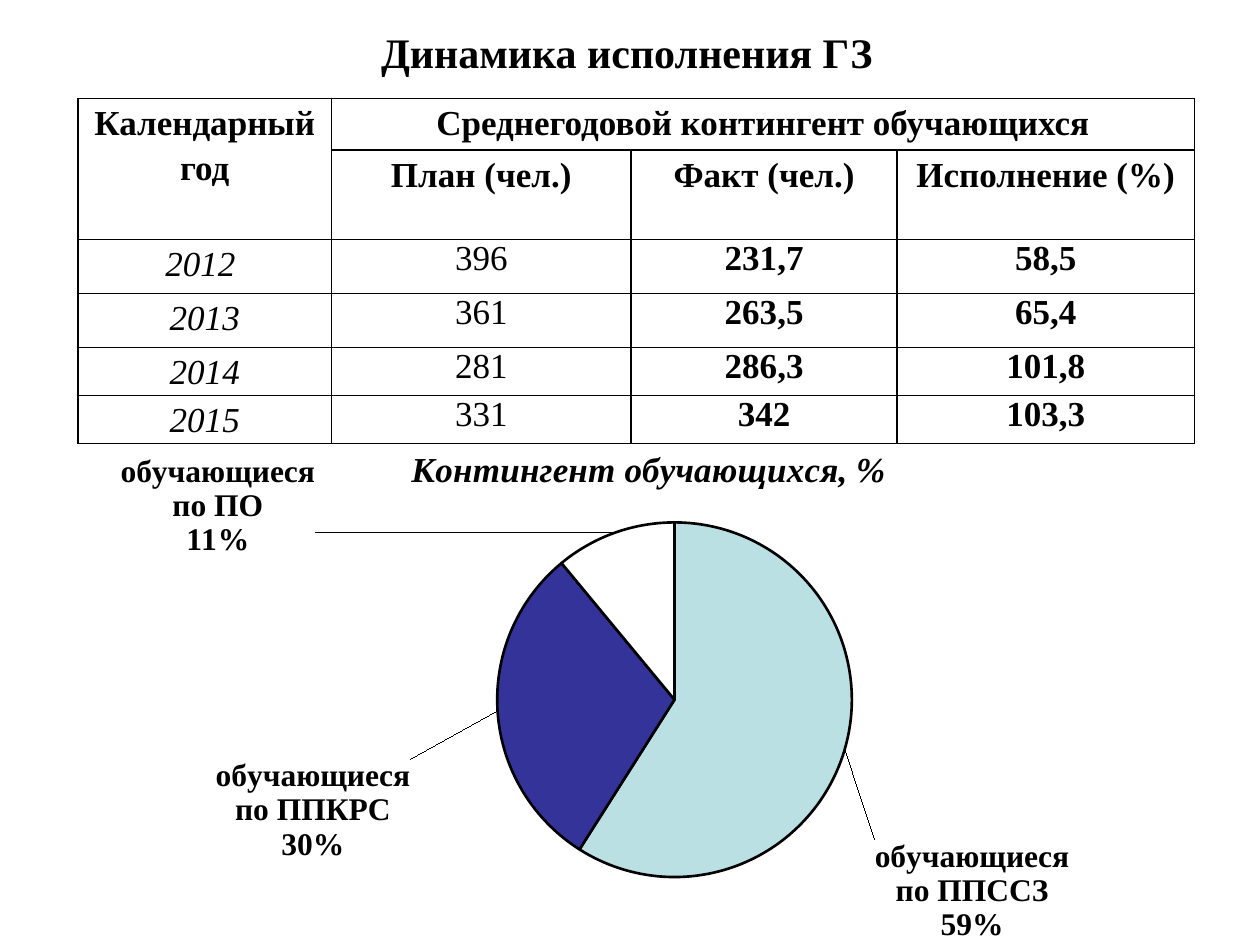
from lxml import etree
from pptx import Presentation
from pptx.chart.data import CategoryChartData
from pptx.dml.color import RGBColor
from pptx.enum.chart import XL_CHART_TYPE, XL_LABEL_POSITION
from pptx.enum.text import MSO_ANCHOR, PP_ALIGN
from pptx.oxml import parse_xml
from pptx.oxml.ns import nsdecls
from pptx.util import Inches, Pt

PIE = XL_CHART_TYPE.PIE
OUTSIDE = XL_LABEL_POSITION.OUTSIDE_END
CENTER = PP_ALIGN.CENTER
MIDDLE = MSO_ANCHOR.MIDDLE
BLACK = RGBColor(0, 0, 0)
WHITE = RGBColor(255, 255, 255)
AQUA = RGBColor(0xBB, 0xE0, 0xE3)
NAVY = RGBColor(0x33, 0x33, 0x99)
FACE = "Times New Roman"


def style(font, size, bold=True, italic=False):
    font.name = FACE
    font.size = Pt(size)
    font.bold = bold
    font.italic = italic
    font.color.rgb = BLACK


def layout(**vals):
    """Return a manual chart layout; vals are its child elements in order."""
    body = "".join(f'<c:{key} val="{val}"/>' for key, val in vals.items())
    return parse_xml(f'<c:layout {nsdecls("c")}><c:manualLayout>{body}'
                     '</c:manualLayout></c:layout>')


prs = Presentation()
prs.slide_width = Inches(10)
prs.slide_height = Inches(7.5)
slide = prs.slides.add_slide(prs.slide_layouts[6])

# Table
HEAD = "Среднегодовой контингент обучающихся"
ROWS = [
    ["Календарный год", HEAD, "", ""],
    ["", "План (чел.)", "Факт (чел.)", "Исполнение (%)"],
    ["2012 ", "396", "231,7", "58,5"],
    ["2013", "361", "263,5", "65,4"],
    ["2014", "281", "286,3", "101,8"],
    ["2015", "331", "342", "103,3"],
]
WIDTHS = [2.01, 2.38, 2.11, 2.36]
HEIGHTS = [0.41, 0.71, 0.43, 0.43, 0.38, 0.38]
table = slide.shapes.add_table(
    len(ROWS), len(WIDTHS), Inches(0.62), Inches(0.78),
    Inches(sum(WIDTHS)), Inches(sum(HEIGHTS))).table
table.first_row = False
table.horz_banding = False
for col, width in zip(table.columns, WIDTHS):
    col.width = Inches(width)
for row, height in zip(table.rows, HEIGHTS):
    row.height = Inches(height)
table.cell(0, 0).merge(table.cell(1, 0))
table.cell(0, 1).merge(table.cell(0, 3))

for r, row in enumerate(ROWS):
    for c, text in enumerate(row):
        cell = table.cell(r, c)
        cell.margin_left = cell.margin_right = Inches(0.07)
        cell.margin_top = cell.margin_bottom = 0
        para = cell.text_frame.paragraphs[0]
        para.text = text
        para.alignment = CENTER
        if r < 2 or c == 0:
            para.line_spacing = 1.15
        style(para.font, 20, bold=r < 2 or c > 1, italic=r > 1 and c == 0)
        props = cell._tc.get_or_add_tcPr()
        for side in "LRTB":
            props.append(parse_xml(
                f'<a:ln{side} {nsdecls("a")} w="{Pt(1)}"><a:solidFill>'
                f'<a:srgbClr val="{BLACK}"/></a:solidFill></a:ln{side}>'))
        cell.fill.background()

# Heading
box = slide.shapes.add_textbox(
    Inches(0.62), Inches(0.16), Inches(8.71), Inches(0.5))
frame = box.text_frame
frame.word_wrap = True
frame.vertical_anchor = MIDDLE
para = frame.paragraphs[0]
para.text = "Динамика исполнения ГЗ"
para.alignment = CENTER
style(para.font, 24)

# Pie: group, share, colour, label shift as a part of the chart's size
NAME = "Контингент обучающихся, %"
PARTS = [
    ("по ППССЗ", 59, AQUA, 0.02, 0.17),
    ("по ППКРС", 30, NAVY, -0.07, 0.19),
    ("по ПО", 11, WHITE, -0.26, 0.06),
]
data = CategoryChartData()
data.categories = [f"обучающиеся {part[0]}" for part in PARTS]
data.add_series(NAME, [part[1] for part in PARTS])
chart = slide.shapes.add_chart(
    PIE, Inches(0.62), Inches(3.36), Inches(9.06), Inches(4.14), data).chart
chart.has_legend = False
chart.font.name = "Arial"
chart.font.size = Pt(18)
chart.font.color.rgb = BLACK

chart.has_title = True
title = chart.chart_title
title.include_in_layout = False
para = title.text_frame.paragraphs[0]
para.text = NAME
style(para.runs[0].font, 20, italic=True)
title._element.tx_rich.getparent().getparent().addnext(
    layout(xMode="edge", yMode="edge", x=0.29, y=0.06))

area = chart._chartSpace.chart.plotArea
for old in area.findall("c:layout", area.nsmap):
    area.remove(old)
area.insert(0, layout(layoutTarget="inner", xMode="edge", yMode="edge",
                      x=0.15, y=0.19, w=0.745, h=0.68))

plot = chart.plots[0]
plot.vary_by_categories = True
plot.has_data_labels = True
labels = plot.data_labels
labels.show_category_name = True
labels.show_percentage = True
labels.show_value = False
labels.position = OUTSIDE
style(labels.font, 18)
lead = labels._element.find("c:showLeaderLines", area.nsmap)
if lead is None:
    lead = etree.SubElement(labels._element, f"{{{area.nsmap['c']}}}showLeaderLines")
lead.set("val", "1")

for i, (group, share, color, dx, dy) in enumerate(PARTS):
    point = plot.series[0].points[i]
    point.format.fill.solid()
    point.format.fill.fore_color.rgb = color
    point.format.line.color.rgb = BLACK
    point.format.line.width = Pt(1.5)
    label = point.data_label
    frame = label.text_frame
    frame.text = f"обучающиеся\n{group}\n{share}%"
    for para in frame.paragraphs:
        style(para.runs[0].font, 18)
    label.position = OUTSIDE
    mark = label._dLbl
    mark.find("c:idx", area.nsmap).addnext(layout(x=dx, y=dy))

# Series labels keep the leader lines next to the single labels
block = plot.series[0].data_labels
block.show_category_name = True
block.show_percentage = True
block.show_value = False
style(block.font, 18)
lead = block._element.find("c:showLeaderLines", area.nsmap)
if lead is not None:
    lead.set("val", "1")

prs.save("out.pptx")
